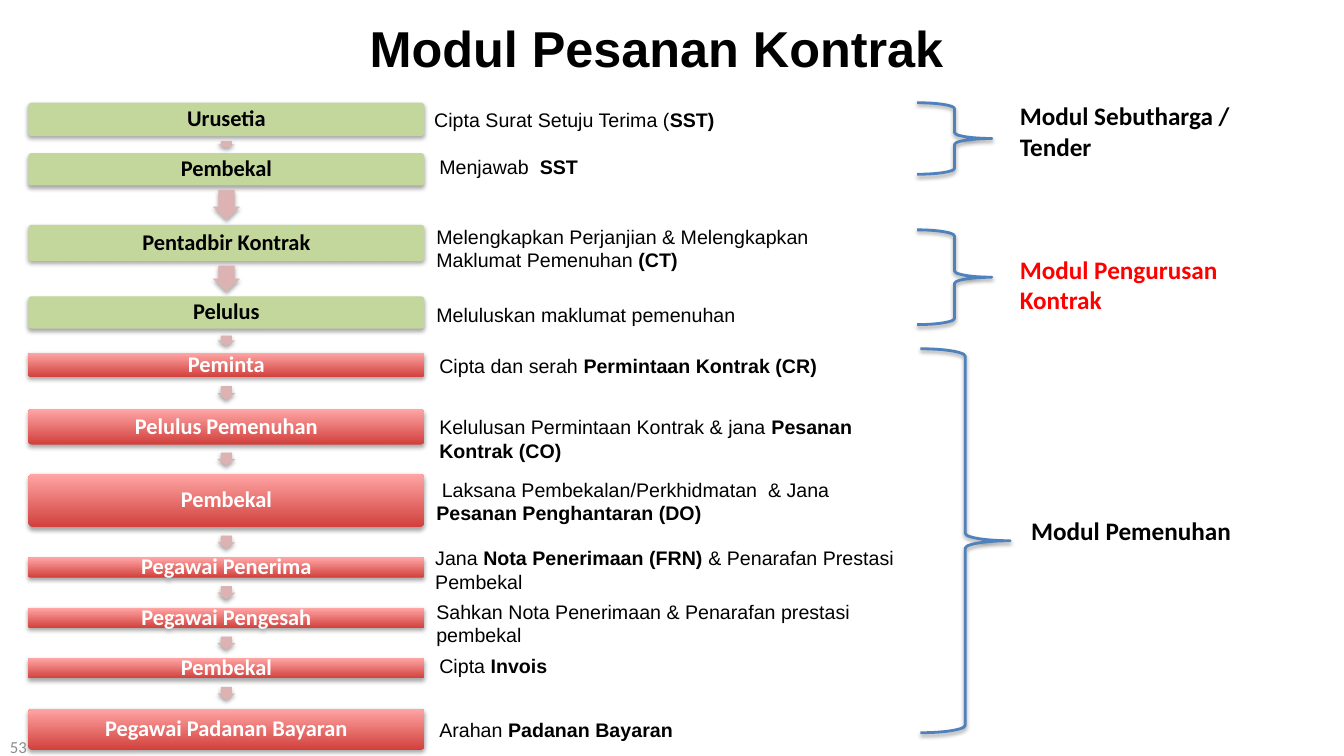
from lxml import etree
from pptx import Presentation
from pptx.dml.color import RGBColor
from pptx.enum import shapes, text
from pptx.oxml.ns import qn
from pptx.util import Pt

COLORS = {
    "black": "000000", "white": "FFFFFF", "red": "FF0000", "grey": "8C8C8C",
    "green": "C3D69B", "arrow": "DCB3B2", "brace": "4F81BD",
    "dark red": "D1403C", "light red": "FFA6A5",
}

# label, top, height, length of the arrow below
CONTRACT_STEPS = [
    ("Urusetia", 73.4, 23.8, 5),
    ("Pembekal", 109.4, 23, 21.6),
    ("Pentadbir Kontrak", 160.6, 25.9, 18.7),
    ("Pelulus", 211.7, 23, 7.2),
]
FULFILMENT_STEPS = [
    ("Peminta", 252, 17.3, 10),
    ("Pelulus Pemenuhan", 292.3, 25.2, 9.4),
    ("Pembekal", 338.4, 38.2, 9.4),
    ("Pegawai Penerima", 398.2, 14.4, 9.4),
    ("Pegawai Pengesah", 434.2, 14.4, 9.4),
    ("Pembekal", 470.2, 14.4, 9.4),
    ("Pegawai Padanan Bayaran", 506.2, 29.5, None),
]
STEP_LEFT, STEP_WIDTH = 20.2, 283

# text with ** around bold parts, left, top, width, line count
DESCRIPTIONS = [
    ("Cipta Surat Setuju Terima (**SST)**", 303.1, 73.4, 216, 1),
    ("Menjawab  **SST**", 306.7, 107.3, 114.5, 1),
    ("Melengkapkan Perjanjian & Melengkapkan Maklumat Pemenuhan **(CT)**",
     304.6, 157, 306.7, 2),
    ("Meluluskan maklumat pemenuhan", 304.6, 213.1, 229, 1),
    ("Cipta dan serah **Permintaan Kontrak (CR)**", 306.7, 249.1, 294.5, 1),
    ("Kelulusan Permintaan Kontrak & jana **Pesanan Kontrak (CO)**",
     306.7, 293, 340.6, 2),
    (" Laksana Pembekalan/Perkhidmatan  & Jana **Pesanan Penghantaran (DO)**",
     304.6, 337.7, 342.7, 2),
    ("Jana **Nota Penerimaan (FRN) **& Penarafan Prestasi Pembekal",
     303.8, 386.6, 353.5, 2),
    ("Sahkan Nota Penerimaan & Penarafan prestasi pembekal",
     304.6, 424.8, 333.4, 2),
    ("Cipta **Invois**", 306.7, 463.7, 92.2, 1),
    ("Arahan **Padanan Bayaran**", 306.7, 509, 182.2, 1),
]
DESCRIPTION_HEIGHTS = {1: 24.2, 2: 41}

# label, colour, label box, brace box
MODULES = [
    ("Modul Sebutharga / Tender", "black",
     (721.4, 68.4, 182.9, 51), (655.2, 73.4, 53.3, 51.1)),
    ("Modul Pengurusan Kontrak", "red",
     (721.4, 177.8, 194.4, 51), (655.2, 164.2, 53.3, 67.7)),
    ("Modul Pemenuhan", "black",
     (729.4, 364.3, 179.3, 29), (657.4, 249.1, 64.1, 274.3)),
]


def color(name):
    return RGBColor.from_string(COLORS[name])


def add_shadow(shape, opacity, distance):
    shape.shadow.inherit = False
    effects = shape._element.spPr.find(qn("a:effectLst"))
    shadow = etree.SubElement(
        effects, qn("a:outerShdw"), blurRad=str(Pt(3.1)),
        dist=str(Pt(distance)), dir="5400000", rotWithShape="0")
    black = etree.SubElement(shadow, qn("a:srgbClr"), val=COLORS["black"])
    etree.SubElement(black, qn("a:alpha"), val=str(opacity * 1000))


def add_preset(slide, preset, box):
    return slide.shapes.add_shape(preset, *(Pt(length) for length in box))


def write(frame, content, size, font, tone, bold=None, align=None):
    """Fill the first paragraph; parts between ** are bold."""
    paragraph = frame.paragraphs[0]
    paragraph.alignment = align
    paragraph.font.size = Pt(size)
    paragraph.font.name = font
    paragraph.font.color.rgb = color(tone)
    paragraph.font.bold = bold
    for index, part in enumerate(content.split("**")):
        if part:
            run = paragraph.add_run()
            run.text = part
            if index % 2:
                run.font.bold = True
    return paragraph


def add_label(slide, content, box, size, font, tone, wrap=True, **style):
    frame = slide.shapes.add_textbox(*(Pt(length) for length in box)).text_frame
    frame.word_wrap = wrap
    frame.auto_size = text.MSO_AUTO_SIZE.SHAPE_TO_FIT_TEXT
    write(frame, content, size, font, tone, **style)
    return frame


def add_step(slide, label, top, height, is_contract):
    step = add_preset(slide, shapes.MSO_SHAPE.ROUNDED_RECTANGLE,
                      (STEP_LEFT, top, STEP_WIDTH, height))
    step.adjustments[0] = 0.1
    step.line.fill.background()
    if is_contract:
        step.fill.solid()
        step.fill.fore_color.rgb = color("green")
    else:
        step.fill.gradient()
        step.fill.gradient_angle = 90
        for stop, position, tone in zip(
                step.fill.gradient_stops, (0, 1), ("dark red", "light red")):
            stop.position = position
            stop.color.rgb = color(tone)
    add_shadow(step, 35, 1.8)
    frame = step.text_frame
    frame.word_wrap = True
    frame.vertical_anchor = text.MSO_ANCHOR.MIDDLE
    frame.margin_left = frame.margin_right = Pt(5)
    frame.margin_top = frame.margin_bottom = Pt(5)
    paragraph = write(frame, label, 16, "Calibri",
                      "black" if is_contract else "white",
                      bold=True, align=text.PP_ALIGN.CENTER)
    paragraph.line_spacing = 0.9


def add_down_arrow(slide, middle, length):
    thickness = 19.4 if length > 15 else 13
    center = STEP_LEFT + STEP_WIDTH / 2
    arrow = add_preset(
        slide, shapes.MSO_SHAPE.RIGHT_ARROW,
        (center - length / 2, middle - thickness / 2, length, thickness))
    arrow.rotation = 90
    arrow.adjustments[0] = 0.6
    arrow.adjustments[1] = 0.5
    arrow.fill.solid()
    arrow.fill.fore_color.rgb = color("arrow")
    arrow.line.fill.background()
    add_shadow(arrow, 35, 1.8)


def add_brace(slide, box):
    brace = add_preset(slide, shapes.MSO_SHAPE.RIGHT_BRACE, box)
    brace.fill.background()
    brace.line.color.rgb = color("brace")
    brace.line.width = Pt(2)
    add_shadow(brace, 38, 1.6)


def main():
    presentation = Presentation()
    presentation.slide_width, presentation.slide_height = Pt(960), Pt(540)
    slide = presentation.slides.add_slide(presentation.slide_layouts[6])

    steps = CONTRACT_STEPS + FULFILMENT_STEPS
    for index, (label, top, height, arrow_length) in enumerate(steps):
        add_step(slide, label, top, height, index < len(CONTRACT_STEPS))
        if arrow_length:
            next_top = steps[index + 1][1]
            add_down_arrow(slide, (top + height + next_top) / 2, arrow_length)

    number = add_label(slide, "53", (0, 519.1, 224, 28.8), 12, "Calibri", "grey")
    number.auto_size = text.MSO_AUTO_SIZE.NONE
    number.vertical_anchor = text.MSO_ANCHOR.MIDDLE
    for content, left, top, width, lines in DESCRIPTIONS:
        add_label(slide, content, (left, top, width, DESCRIPTION_HEIGHTS[lines]),
                  14, "Arial", "black", wrap=lines > 1)
    add_label(slide, "Modul Pesanan Kontrak", (247.7, 8.6, 442.8, 51), 36,
              "Arial", "black", bold=True, align=text.PP_ALIGN.CENTER)
    for label, tone, label_box, brace_box in MODULES:
        add_brace(slide, brace_box)
        add_label(slide, label, label_box, 18, "Calibri", tone, bold=True)

    presentation.save("out.pptx")


if __name__ == "__main__":
    main()
